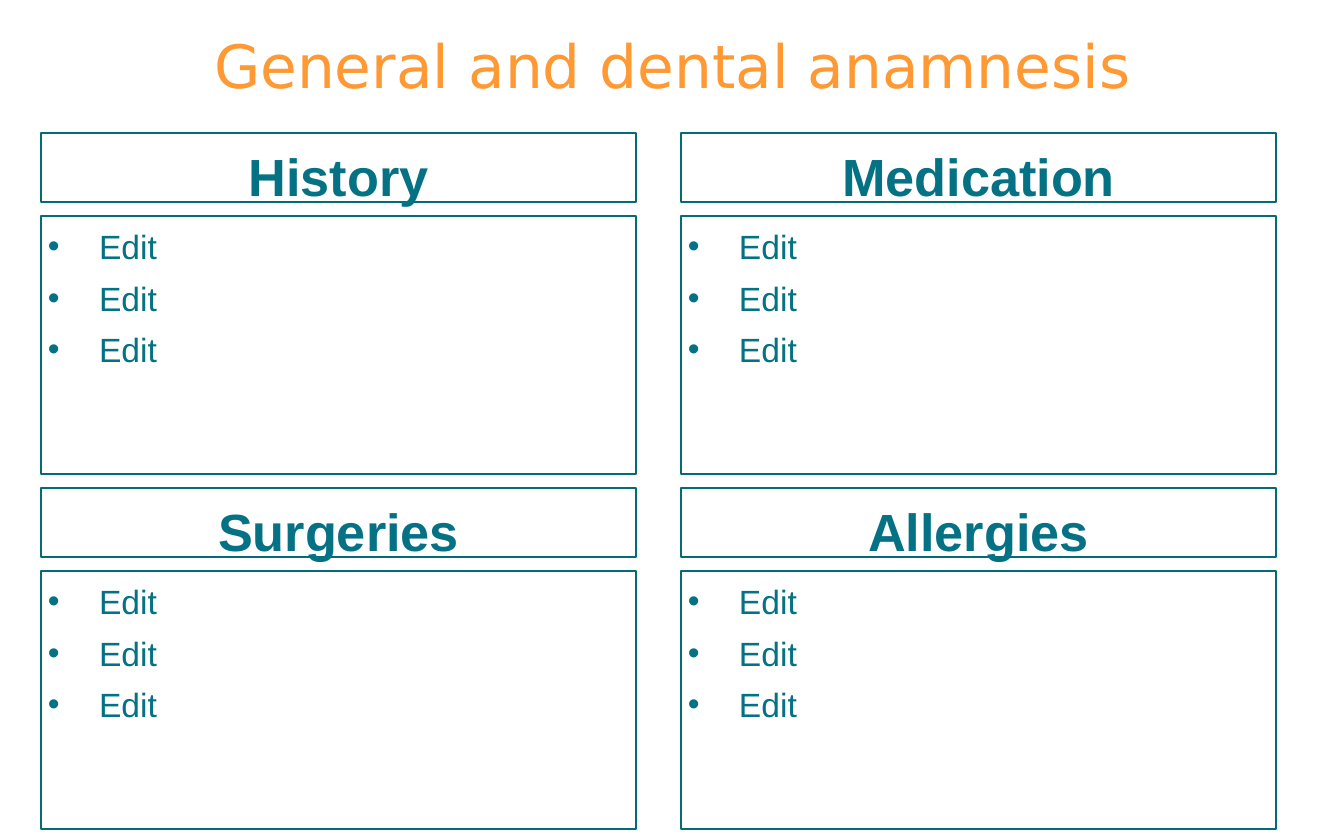
"""Build the anamnesis slide: a title over a two-by-two grid of headed lists."""
from dataclasses import dataclass

from lxml.etree import SubElement
from pptx import Presentation
from pptx.dml.color import RGBColor
from pptx.enum.shapes import MSO_SHAPE
from pptx.enum.text import MSO_ANCHOR, PP_ALIGN
from pptx.oxml.ns import qn
from pptx.util import Pt

TITLE = "General and dental anamnesis"
SECTIONS = [
    ("History", ["Edit", "Edit", "Edit"]),
    ("Medication", ["Edit", "Edit", "Edit"]),
    ("Surgeries", ["Edit", "Edit", "Edit"]),
    ("Allergies", ["Edit", "Edit", "Edit"]),
]


@dataclass(frozen=True)
class Theme:
    border: RGBColor = RGBColor.from_string("036C77")
    border_width: Pt = Pt(0.75)
    title: tuple = ("DejaVu Sans", 32, "FF9933", False)
    heading: tuple = ("Arial", 28, "047284", True)
    item: tuple = ("Arial", 18, "047284", False)


THEME = Theme()
COLUMNS = 2
GRID_LEFT, GRID_TOP = 41, 133
COLUMN_STEP, ROW_STEP = 640, 355
PANEL_WIDTH, HEADING_HEIGHT = 595, 69
LIST_OFFSET, LIST_HEIGHT = 83, 258
INSET, INDENT = 7, 51


def px(length):
    return round(length * 914400 / 134.4)


def set_all(target, values):
    for attribute, value in values.items():
        setattr(target, attribute, value)


def add_frame(shapes, box):
    frame = shapes.add_shape(MSO_SHAPE.RECTANGLE, *map(px, box))
    frame.shadow.inherit = False
    frame.fill.background()
    frame.line.color.rgb = THEME.border
    frame.line.width = THEME.border_width
    return frame


def write(holder, lines, style, align, anchor=MSO_ANCHOR.TOP, top=INSET, bottom=INSET, gap=0):
    font_name, size, color, bold = style
    set_all(holder.text_frame, {
        "text": "\n".join(lines), "word_wrap": True, "vertical_anchor": anchor,
        "margin_left": px(INSET), "margin_right": px(INSET),
        "margin_top": px(top), "margin_bottom": px(bottom),
    })
    for paragraph in holder.text_frame.paragraphs:
        set_all(paragraph, {"alignment": align, "space_before": Pt(gap)})
        font = paragraph.runs[0].font
        set_all(font, {"name": font_name, "size": Pt(size), "bold": bold})
        font.color.rgb = RGBColor.from_string(color)


def add_bullets(holder):
    for paragraph in holder.text_frame.paragraphs:
        properties = paragraph._p.get_or_add_pPr()
        properties.set("marL", str(px(INDENT)))
        properties.set("indent", str(-px(INDENT)))
        SubElement(properties, qn("a:buFont")).set("typeface", "Arial")
        SubElement(properties, qn("a:buChar")).set("char", "•")


def add_section(slide, position, heading, items):
    row, column = divmod(position, COLUMNS)
    left = GRID_LEFT + column * COLUMN_STEP
    top = GRID_TOP + row * ROW_STEP

    item_list = add_frame(slide.shapes, (left, top + LIST_OFFSET, PANEL_WIDTH, LIST_HEIGHT))
    write(item_list, items, THEME.item, PP_ALIGN.LEFT, top=10, gap=6)
    add_bullets(item_list)

    heading_group = slide.shapes.add_group_shape()
    heading_box = (left, top, PANEL_WIDTH, HEADING_HEIGHT)
    add_frame(heading_group.shapes, heading_box)
    label = heading_group.shapes.add_textbox(*map(px, heading_box))
    write(label, [heading], THEME.heading, PP_ALIGN.CENTER, top=11, bottom=0)


def main():
    deck = Presentation()
    set_all(deck, {"slide_width": px(1344), "slide_height": px(840)})
    slide = deck.slides.add_slide(deck.slide_layouts[6])
    title = slide.shapes.add_textbox(*map(px, (22, 22, 1302, 86)))
    write(title, [TITLE], THEME.title, PP_ALIGN.CENTER, MSO_ANCHOR.MIDDLE)
    for position, (heading, items) in enumerate(SECTIONS):
        add_section(slide, position, heading, items)
    deck.save("out.pptx")


if __name__ == "__main__":
    main()
